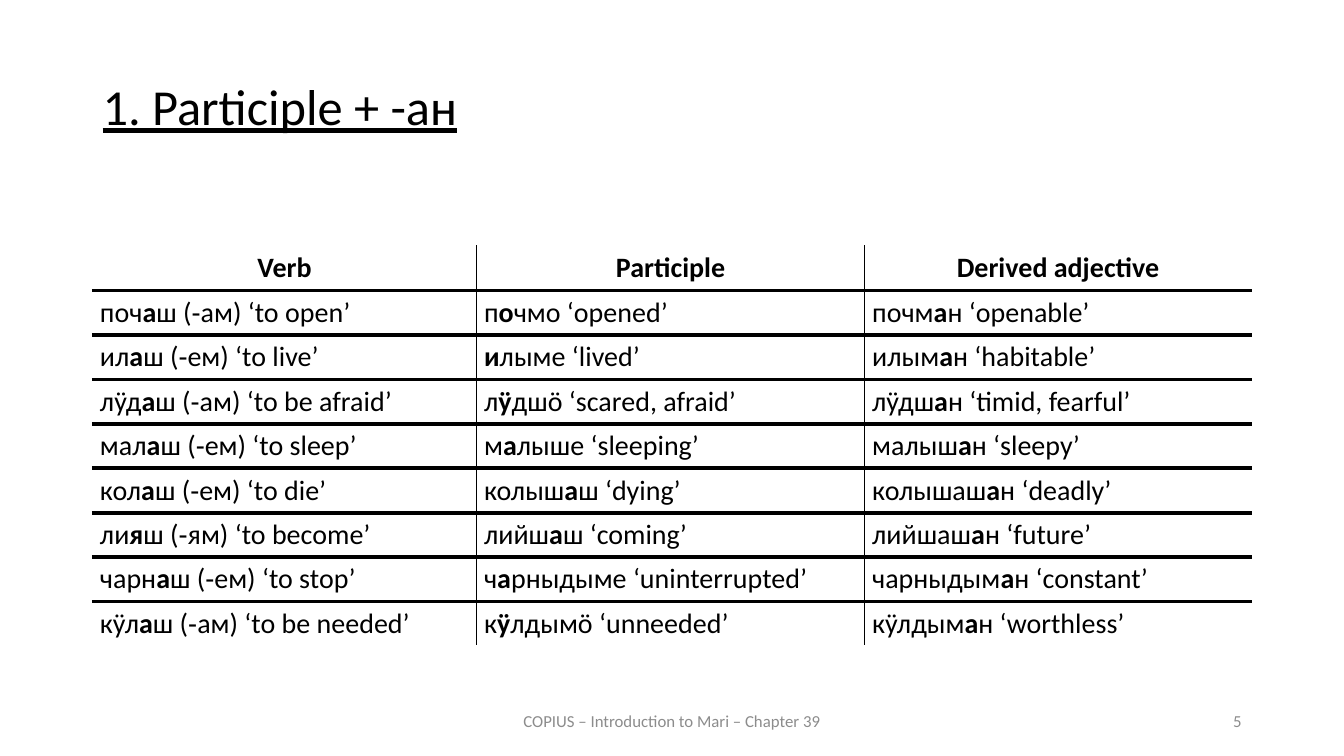
from lxml import etree
from pptx import Presentation
from pptx.dml.color import RGBColor
from pptx.enum.text import MSO_ANCHOR, MSO_AUTO_SIZE, PP_ALIGN
from pptx.oxml.ns import qn
from pptx.util import Cm, Pt

LEFT, CENTER, RIGHT, JUSTIFY = (
    PP_ALIGN.LEFT, PP_ALIGN.CENTER, PP_ALIGN.RIGHT, PP_ALIGN.JUSTIFY)
TOP, MIDDLE = MSO_ANCHOR.TOP, MSO_ANCHOR.MIDDLE
NO_FIT = MSO_AUTO_SIZE.NONE
FONT, BLACK, GREY = "Calibri", "000000", "8C8C8C"
THIN, THICK = Pt(1), Pt(3)
WIDTHS = [9.68, 9.78, 9.75]
ROW = 1.12

# Asterisks enclose the stressed vowel, which is set in bold.
HEAD = ["Verb", "Participle", "Derived adjective"]
WORDS = [
    ["поч*а*ш (‑ам) ‘to open’", "п*о*чмо ‘opened’", "почм*а*н ‘openable’"],
    ["ил*а*ш (‑ем) ‘to live’", "*и*лыме ‘lived’", "илым*а*н ‘habitable’"],
    ["лӱд*а*ш (‑ам) ‘to be afraid’", "л*ӱ*дшӧ ‘scared, afraid’",
     "лӱдш*а*н ‘timid, fearful’"],
    ["мал*а*ш (‑ем) ‘to sleep’", "м*а*лыше ‘sleeping’", "малыш*а*н ‘sleepy’"],
    ["кол*а*ш (‑ем) ‘to die’", "колыш*а*ш ‘dying’", "колышаш*а*н ‘deadly’"],
    ["ли*я*ш (‑ям) ‘to become’", "лийш*а*ш ‘coming’", "лийшаш*а*н ‘future’"],
    ["чарн*а*ш (‑ем) ‘to stop’", "ч*а*рныдыме ‘uninterrupted’",
     "чарныдым*а*н ‘constant’"],
    ["кӱл*а*ш (‑ам) ‘to be needed’", "к*ӱ*лдымӧ ‘unneeded’",
     "кӱлдым*а*н ‘worthless’"],
]


def paint(color, tone):
    color.rgb = RGBColor.from_string(tone)


def style(para, size, tone, align):
    para.alignment = align
    para.font.name = FONT
    para.font.size = Pt(size)
    paint(para.font.color, tone)


def add_title(slide, text):
    title = slide.shapes.title
    title.left, title.top = Cm(2.33), Cm(1.93)
    title.width, title.height = Cm(29.21), Cm(2.11)
    frame = title.text_frame
    frame.text = text
    frame.vertical_anchor = TOP
    frame.auto_size = NO_FIT
    para = frame.paragraphs[0]
    style(para, 36, BLACK, JUSTIFY)
    para.font.underline = True
    para.line_spacing = 0.9
    para.space_before = Pt(12)


def add_note(slide, text, left, width, align):
    """Add a small grey text at the foot of the slide."""
    box = slide.shapes.add_textbox(Cm(left), Cm(17.65), Cm(width), Cm(1.02))
    frame = box.text_frame
    frame.word_wrap = True
    frame.vertical_anchor = MIDDLE
    frame.text = text
    style(frame.paragraphs[0], 12, GREY, align)


def add_edge(cell, side, width):
    edge = etree.SubElement(
        cell._tc.get_or_add_tcPr(), qn("a:ln" + side), w=str(width))
    fill = etree.SubElement(edge, qn("a:solidFill"))
    etree.SubElement(fill, qn("a:srgbClr"), val=BLACK)


def fill_cell(cell, text, is_head):
    cell.margin_left = cell.margin_right = Cm(0.19)
    cell.margin_top = cell.margin_bottom = 0
    cell.vertical_anchor = MIDDLE
    para = cell.text_frame.paragraphs[0]
    style(para, 20, BLACK, CENTER if is_head else JUSTIFY)
    para.font.bold = is_head
    for i, part in enumerate(text.split("*")):
        if part:
            run = para.add_run()
            run.text = part
            if i % 2:
                run.font.bold = True


def add_grid(slide, rows):
    """Add the table, ruled only between its cells."""
    last_row, last_col = len(rows) - 1, len(WIDTHS) - 1
    frame = slide.shapes.add_table(
        len(rows), len(WIDTHS), Cm(2.33), Cm(6.2),
        Cm(sum(WIDTHS)), Cm(ROW * len(rows)))
    table = frame.table
    table.first_row = table.horz_banding = False
    for col, width in zip(table.columns, WIDTHS):
        col.width = Cm(width)
    for r, row in enumerate(rows):
        table.rows[r].height = Cm(ROW)
        for c, text in enumerate(row):
            cell = table.cell(r, c)
            fill_cell(cell, text, r == 0)
            edges = [("L", c > 0, THIN), ("R", c < last_col, THIN),
                     ("T", r > 0, THICK), ("B", r < last_row, THICK)]
            for side, inner, width in edges:
                if inner:
                    add_edge(cell, side, width)
            cell.fill.background()


def main():
    deck = Presentation()
    deck.slide_width, deck.slide_height = Cm(33.87), Cm(19.05)
    slide = deck.slides.add_slide(deck.slide_layouts[5])
    add_title(slide, "1. Participle + -ан")
    add_grid(slide, [HEAD] + WORDS)
    add_note(slide, "COPIUS – Introduction to Mari – Chapter 39",
             11.22, 11.43, CENTER)
    add_note(slide, "5", 23.92, 7.62, RIGHT)
    deck.save("out.pptx")


if __name__ == "__main__":
    main()
